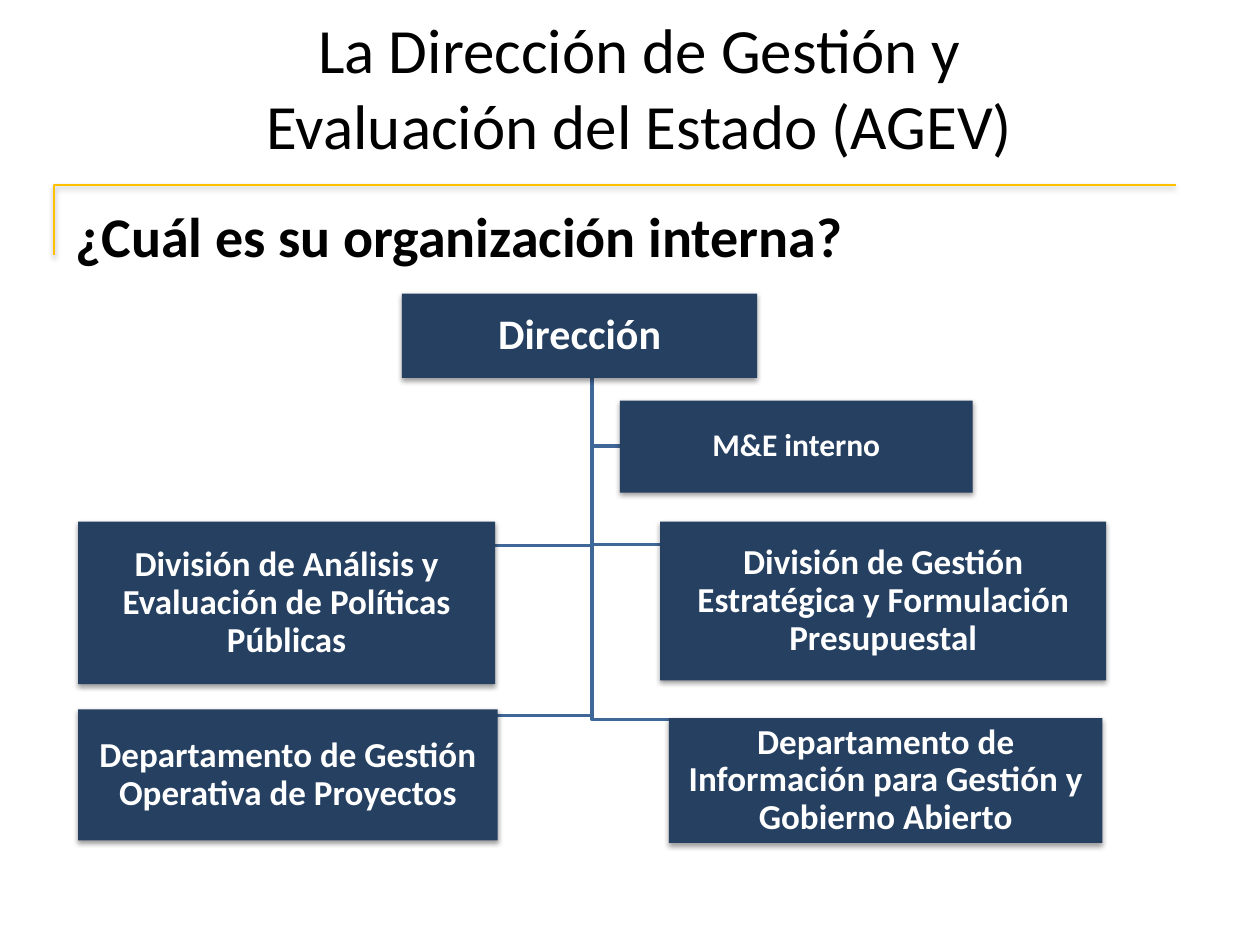
from lxml import etree
from pptx import Presentation
from pptx.dml.color import RGBColor
from pptx.enum.shapes import MSO_SHAPE
from pptx.enum.text import MSO_ANCHOR, MSO_AUTO_SIZE, PP_ALIGN
from pptx.oxml.ns import qn
from pptx.util import Inches, Pt

FONT = "Calibri"
NAVY, BLUE, GOLD, BLACK, WHITE = "254061", "3F6797", "FFC000", "000000", "FFFFFF"

# text, font size, (left, top, width, height)
DIRECTION = ("Dirección", 24, (3.19, 2.33, 2.82, 0.67))
STAFF = ("M&E interno", 18, (4.92, 3.18, 2.8, 0.73))
UNITS = [
    ("División de Análisis y Evaluación de Políticas Públicas", 20,
     (0.62, 4.14, 3.31, 1.29)),
    ("División de Gestión Estratégica y Formulación Presupuestal", 20,
     (5.24, 4.14, 3.54, 1.26)),
    ("Departamento de Gestión Operativa de Proyectos", 20,
     (0.62, 5.63, 3.33, 1.04)),
    ("Departamento de Información para Gestión y Gobierno Abierto", 20,
     (5.31, 5.7, 3.44, 0.99)),
]
# bend height, (end x, end y) of the branch to each unit
BRANCHES = [(4.33, (2.71, 4.35)), (4.32, (6.99, 4.34)),
            (5.68, (2.51, 5.7)), (5.71, (6.76, 5.73))]
TRUNK_X = 4.7


def rgb(color):
    return RGBColor.from_string(color)


def add_shadow(s, alpha=38):
    """Give the shape a soft shadow that falls straight down."""
    s.shadow.inherit = False
    effects = s._element.spPr.find(qn("a:effectLst"))
    shadow = etree.SubElement(effects, qn("a:outerShdw"), blurRad=str(Pt(3.1)),
                              dist=str(Pt(1.6)), dir="5400000", rotWithShape="0")
    color = etree.SubElement(shadow, qn("a:srgbClr"), val=BLACK)
    etree.SubElement(color, qn("a:alpha"), val=str(alpha * 1000))


def format_text(p, size, color, align, bold=False):
    p.alignment = align
    p.font.name, p.font.size, p.font.bold = FONT, Pt(size), bold
    p.font.color.rgb = rgb(color)


def add_polyline(slide, points, color, width):
    points = [(Inches(x), Inches(y)) for x, y in points]
    builder = slide.shapes.build_freeform(*points[0])
    builder.add_line_segments(points[1:], close=False)
    s = builder.convert_to_shape()
    s.fill.background()
    s.line.color.rgb = rgb(color)
    s.line.width = Pt(width)
    s.shadow.inherit = False
    return s


def add_header(slide, left, top, width):
    """Place the title, the gold corner rule and the question below it."""
    rule_y = top + 1.41
    rule = add_polyline(slide, [(left, rule_y + 0.55), (left, rule_y),
                                (left + width, rule_y)], GOLD, 1)
    add_shadow(rule)

    title = slide.shapes.title
    title.left, title.top = Inches(left + 1.18), Inches(top)
    title.width, title.height = Inches(6.93), Inches(1.25)
    tf = title.text_frame
    tf.text = "La Dirección de Gestión y Evaluación del Estado (AGEV)"
    tf.auto_size = MSO_AUTO_SIZE.NONE
    tf.vertical_anchor = MSO_ANCHOR.MIDDLE
    format_text(tf.paragraphs[0], 36, BLACK, PP_ALIGN.CENTER)

    question = slide.shapes.add_textbox(Inches(left + 0.07), Inches(rule_y + 0.08),
                                        Inches(9.15), Inches(5.75))
    tf = question.text_frame
    tf.word_wrap = True
    tf.text = "¿Cuál es su organización interna?"
    format_text(tf.paragraphs[0], 32, BLACK, PP_ALIGN.JUSTIFY, bold=True)


def add_unit(slide, text, size, box):
    s = slide.shapes.add_shape(MSO_SHAPE.RECTANGLE, *map(Inches, box))
    s.fill.solid()
    s.fill.fore_color.rgb = rgb(NAVY)
    s.line.fill.background()
    add_shadow(s)
    tf = s.text_frame
    tf.word_wrap = True
    tf.vertical_anchor = MSO_ANCHOR.MIDDLE
    tf.margin_left = tf.margin_right = Inches(0.01)
    tf.margin_top = tf.margin_bottom = Inches(0.01)
    tf.text = text
    p = tf.paragraphs[0]
    p.line_spacing = 0.9
    format_text(p, size, WHITE, PP_ALIGN.CENTER, bold=True)


def add_org_chart(slide):
    _, _, (_, top, _, height) = DIRECTION
    start = (TRUNK_X, top + height)
    staff_y = 3.54
    add_polyline(slide, [start, (TRUNK_X, staff_y), (STAFF[2][0], staff_y)], BLUE, 2)
    for bend_y, end in BRANCHES:
        add_polyline(slide, [start, (TRUNK_X, bend_y), (end[0], bend_y), end], BLUE, 2)
    for text, size, box in [DIRECTION, *UNITS, STAFF]:
        add_unit(slide, text, size, box)


def main():
    prs = Presentation()
    prs.slide_width, prs.slide_height = Inches(10), Inches(7.5)
    slide = prs.slides.add_slide(prs.slide_layouts[5])
    add_header(slide, 0.43, 0.06, 8.9)
    add_org_chart(slide)
    prs.save("out.pptx")


if __name__ == "__main__":
    main()
